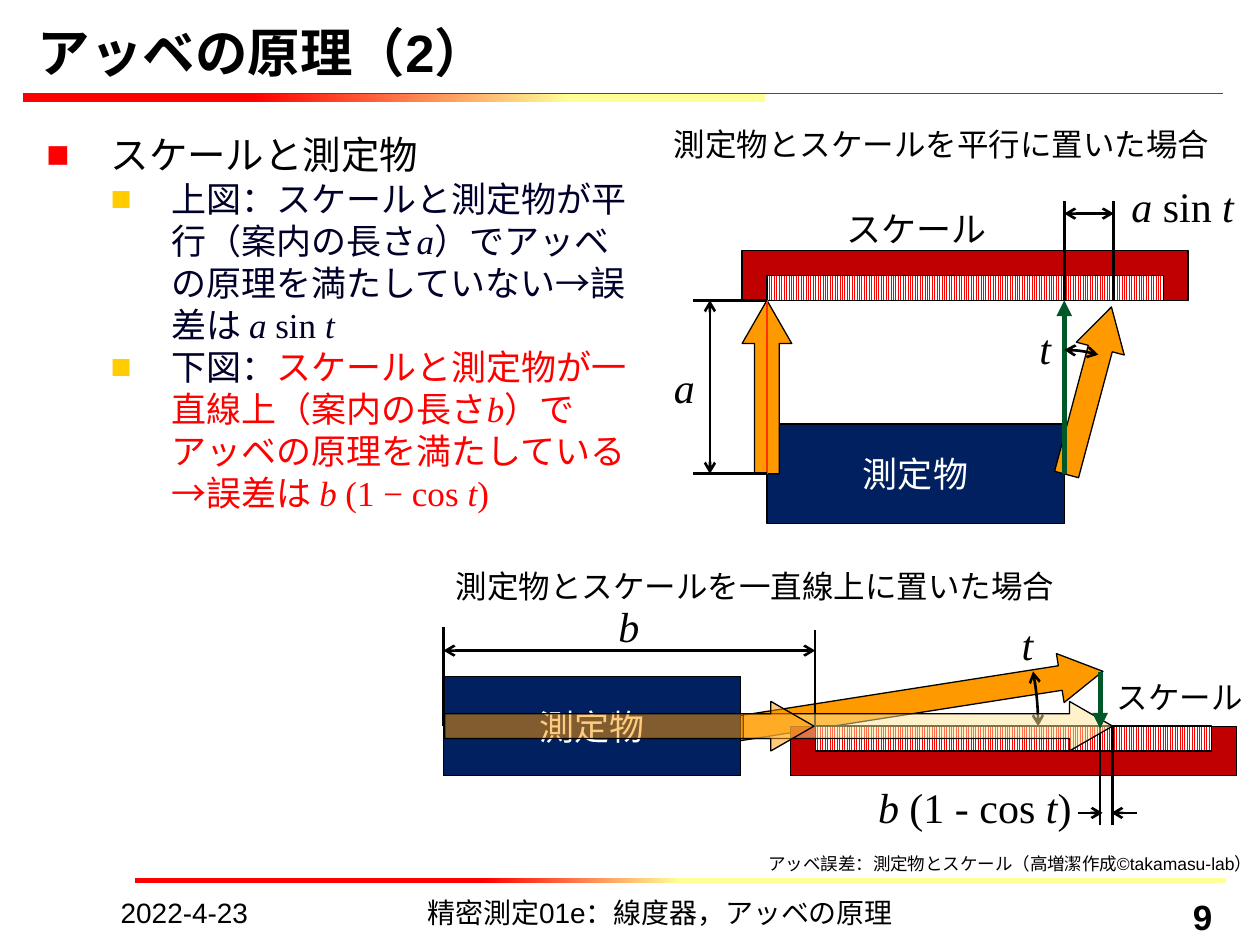
from dataclasses import dataclass
from math import cos, radians, sin

from lxml.etree import SubElement
from pptx import Presentation
from pptx.dml.color import RGBColor
from pptx.enum.dml import MSO_PATTERN
from pptx.enum.shapes import MSO_CONNECTOR, MSO_SHAPE
from pptx.enum.text import MSO_ANCHOR, MSO_AUTO_SIZE, PP_ALIGN
from pptx.oxml.ns import qn
from pptx.util import Inches, Pt

COLORS = {
    "black": "000000", "white": "FFFFFF", "red": "FF0000", "yellow": "FFFF99",
    "gold": "FFCC00", "ink": "00002A", "scale": "C00000", "object": "002060",
    "orange": "FF9900", "axis": "FF3300", "green": "005828", "pale": "FFE699",
}
SERIF = "Times New Roman"


@dataclass(frozen=True)
class Grid:
    """Square cells of `cell` inches counted from an origin in inches."""
    left: float
    top: float
    cell: float

    def point(self, col: float, row: float) -> tuple[int, int]:
        return Inches(self.left + col * self.cell), Inches(self.top + row * self.cell)

    def box(self, col: float, row: float, cols: float, rows: float) -> tuple[int, ...]:
        return *self.point(col, row), Inches(cols * self.cell), Inches(rows * self.cell)


@dataclass(frozen=True)
class Label:
    text: str
    box: tuple[float, float, float, float]
    size: float = 18
    font: str = "Arial"
    align: PP_ALIGN = PP_ALIGN.LEFT
    bold: bool = False
    wrap: bool = True


@dataclass(frozen=True)
class Line:
    start: tuple[float, float]
    end: tuple[float, float]
    heads: str = ""
    color: str = "black"
    width: float = 1.5


@dataclass(frozen=True)
class Bullet:
    phrases: tuple[tuple[str, str], ...]
    size: float
    font: str
    color: str
    left: float
    hanging: float


PAGE = Grid(0, 0, 1)
CELL = 3.54 / 18  # a scale is 18 cells long
UPPER = Grid(5.89, 1.99, CELL)
LOWER = Grid(3.52, 5.37, CELL)

BULLETS = [
    Bullet((("black", "スケールと測定物"),), 22, "Arial", "red", 0.51, 0.51),
    Bullet((("ink", "上図：スケールと測定物が平行（案内の長さ*a*）でアッベの原理を満たしていない→誤差は "
             "*a* sin *t*"),), 20, SERIF, "gold", 0.99, 0.48),
    Bullet((("ink", "下図："),
            ("red", "スケールと測定物が一直線上（案内の長さ*b*）でアッベの原理を満たしている→誤差は "
             "*b* (1 − cos *t*)")), 20, SERIF, "gold", 0.99, 0.48),
]
LABELS = [
    Label("2022-4-23", (0.86, 7.06, 2.17, 0.29), 16),
    Label("精密測定01e：線度器，アッベの原理", (2.64, 7.06, 5.2, 0.29), 16, align=PP_ALIGN.CENTER),
    Label("9", (8.07, 7.06, 1.65, 0.29), 20, align=PP_ALIGN.RIGHT, bold=True),
    Label("アッベ誤差：測定物とスケール（高増潔作成©takamasu-lab）", (6, 6.72, 4.19, 0.27), 10),
    Label("測定物とスケールを平行に置いた場合", (5.25, 0.94, 4.5, 0.4)),
    Label("測定物とスケールを一直線上に置いた場合", (3.52, 4.45, 5.14, 0.4)),
    Label("スケール", (6.48, 1.6, 1.59, 0.44), 20, align=PP_ALIGN.CENTER),
    Label("スケール", (8.73, 5.33, 1.27, 0.4), align=PP_ALIGN.CENTER),
    Label("*a*", (5.25, 2.82, 0.37, 0.51), 24, SERIF, wrap=False),
    Label("*a *sin* t*", (8.88, 1.38, 1.02, 0.51), 24, SERIF, wrap=False),
    Label("*t*", (8.15, 2.51, 0.3, 0.51), 24, SERIF, wrap=False),
    Label("*b*", (4.81, 4.72, 0.37, 0.51), 24, SERIF, wrap=False),
    Label("*b* (1 - cos* t*)", (6.87, 6.15, 1.75, 0.51), 24, SERIF, wrap=False),
    Label("*t*", (8.01, 4.86, 0.3, 0.51), 24, SERIF, wrap=False),
]
UPPER_LINES = [
    Line((13, 9), (13, 2), ">", "green", 3),
    Line((13, 2), (13, -2)), Line((15, 2), (15, -2)),
    Line((13, -1.5), (15, -1.5), "<>"),
    Line((1, 9), (-2, 9)), Line((1, 2), (-2, 2)),
    Line((-1.3, 2), (-1.3, 9), "<>"),
]
LOWER_LINES = [
    Line((27, 6), (27, 2)), Line((26.5, 6), (26.5, 2)),
    Line((26.95, 5.5), (28, 5.5), "<"), Line((25.6, 5.5), (26.6, 5.5), ">"),
    Line((15, -1.05), (0, -1.05), "<>"),
    Line((0, 2), (0, -2)), Line((15, 2), (15, -1.9)),
]


def rgb(name: str) -> RGBColor:
    return RGBColor.from_string(COLORS[name])


def add_runs(p, text: str, font: str, size: float, color: str, bold: bool = False) -> None:
    """Add text in which asterisks switch italics on and off."""
    for i, piece in enumerate(text.split("*")):
        if piece:
            r = p.add_run()
            r.text = piece
            f = r.font
            f.name, f.size, f.bold, f.italic = font, Pt(size), bold, i % 2 == 1
            f.color.rgb = rgb(color)


def add_label(slide, label: Label) -> None:
    tf = slide.shapes.add_textbox(*PAGE.box(*label.box)).text_frame
    tf.word_wrap = label.wrap
    p = tf.paragraphs[0]
    p.alignment = label.align
    add_runs(p, label.text, label.font, label.size, "black", label.bold)


def add_bullets(slide) -> None:
    tf = slide.shapes.add_textbox(*PAGE.box(0.27, 0.99, 4.94, 5.91)).text_frame
    tf.word_wrap = True
    for i, b in enumerate(BULLETS):
        p = tf.paragraphs[0] if i == 0 else tf.add_paragraph()
        p.level = min(i, 1)
        pPr = p._p.get_or_add_pPr()
        pPr.set("marL", str(Inches(b.left)))
        pPr.set("indent", str(-Inches(b.hanging)))
        SubElement(SubElement(pPr, qn("a:buClr")), qn("a:srgbClr"), val=COLORS[b.color])
        SubElement(pPr, qn("a:buFont"), typeface="Arial")
        SubElement(pPr, qn("a:buChar"), char="■")
        for color, text in b.phrases:
            add_runs(p, text, b.font, b.size, color)


def add_block(slide, grid: Grid, box, color: str, kind=MSO_SHAPE.RECTANGLE):
    sp = slide.shapes.add_shape(kind, *grid.box(*box))
    sp.shadow.inherit = False
    sp.fill.solid()
    sp.fill.fore_color.rgb = rgb(color)
    sp.line.color.rgb = rgb("black")
    sp.line.width = Pt(0.75)
    return sp


def add_arrow(slide, grid: Grid, box, kind, turn: float = 0, color: str = "orange",
              alpha: int = 100) -> None:
    sp = add_block(slide, grid, box, color, kind)
    sp.adjustments[0], sp.adjustments[1] = 0.5, 0.87
    sp.rotation = turn
    if alpha < 100:
        clr = sp._element.spPr.find(qn("a:solidFill"))[0]
        SubElement(clr, qn("a:alpha"), val=str(alpha * 1000))


def add_scale(slide, grid: Grid, col: float, row: float, tick_row: float) -> None:
    add_block(slide, grid, (col, row, 18, 2), "scale")
    fill = add_block(slide, grid, (col + 1, tick_row, 16, 1), "white").fill
    fill.patterned()
    fill.pattern = MSO_PATTERN.LIGHT_VERTICAL
    fill.fore_color.rgb, fill.back_color.rgb = rgb("red"), rgb("white")


def add_object(slide, grid: Grid, col: float, row: float) -> None:
    tf = add_block(slide, grid, (col, row, 12, 4), "object").text_frame
    tf.word_wrap = False
    tf.vertical_anchor = MSO_ANCHOR.MIDDLE
    tf.paragraphs[0].alignment = PP_ALIGN.CENTER
    add_runs(tf.paragraphs[0], "測定物", "Arial", 20, "white")


def add_heads(line, heads: str, kind: str) -> None:
    ln = line._get_or_add_ln()
    for mark, tag in (("<", "a:headEnd"), (">", "a:tailEnd")):
        if mark in heads:
            SubElement(ln, qn(tag), type=kind)


def add_line(slide, grid: Grid, line: Line) -> None:
    c = slide.shapes.add_connector(
        MSO_CONNECTOR.STRAIGHT, *grid.point(*line.start), *grid.point(*line.end))
    c.line.color.rgb = rgb(line.color)
    c.line.width = Pt(line.width)
    add_heads(c.line, line.heads, "triangle" if line.color == "green" else "arrow")
    SubElement(c._element.spPr, qn("a:effectLst"))


def add_angle(slide, grid: Grid, center, radius: float, first: float, last: float) -> None:
    """Draw a two-headed arc between two angles in degrees, clockwise from the right."""
    steps = 16
    angles = [radians(first + (last - first) * i / steps) for i in range(steps + 1)]
    points = [grid.point(center[0] + radius * cos(a), center[1] + radius * sin(a)) for a in angles]
    builder = slide.shapes.build_freeform(*points[0])
    builder.add_line_segments(points[1:], close=False)
    sp = builder.convert_to_shape()
    sp.shadow.inherit = False
    sp.fill.background()
    sp.line.color.rgb = rgb("black")
    sp.line.width = Pt(1.5)
    add_heads(sp.line, "<>", "arrow")


def add_rule(slide, box, red_end: float, yellow_start: float) -> None:
    sp = add_block(slide, PAGE, box, "red")
    sp.line.fill.background()
    sp.fill.gradient()
    sp.fill.gradient_angle = 0
    stops = zip(sp.fill.gradient_stops, (red_end, yellow_start), ("red", "yellow"))
    for stop, position, color in stops:
        stop.position, stop.color.rgb = position, rgb(color)


def add_title(slide) -> None:
    sp = slide.shapes.title
    sp.left, sp.top, sp.width, sp.height = PAGE.box(0.2, 0.21, 9.53, 0.5)
    tf = sp.text_frame
    tf.auto_size = MSO_AUTO_SIZE.NONE
    tf.vertical_anchor = MSO_ANCHOR.BOTTOM
    tf.paragraphs[0].alignment = PP_ALIGN.LEFT
    add_runs(tf.paragraphs[0], "アッベの原理（2）", "Arial", 30, "black", True)


def add_parallel_case(slide) -> None:
    add_scale(slide, UPPER, 0, 0, 1)
    add_object(slide, UPPER, 1, 7)
    add_arrow(slide, UPPER, (0, 2, 2, 7), MSO_SHAPE.UP_ARROW)
    add_line(slide, UPPER, Line((1, 2), (1, 9), color="axis", width=1))
    add_arrow(slide, UPPER, (13, 2.15, 2, 7), MSO_SHAPE.UP_ARROW, 15)
    for line in UPPER_LINES:
        add_line(slide, UPPER, line)
    add_angle(slide, UPPER, (13, 9), 5, -90, -74)


def add_inline_case(slide) -> None:
    right = MSO_SHAPE.RIGHT_ARROW
    add_arrow(slide, LOWER, (11.8, -0.06, 14.9, 2), right, -8.9)
    add_scale(slide, LOWER, 14, 2, 2)
    add_object(slide, LOWER, 0, 0)
    for line in LOWER_LINES:
        add_line(slide, LOWER, line)
    add_angle(slide, LOWER, (12, 2), 12, -10.6, 0)
    add_arrow(slide, LOWER, (12.1, 1, 14.9, 2), right, color="pale", alpha=50)
    add_arrow(slide, LOWER, (0.05, 1, 14.9, 2), right, alpha=50)
    add_line(slide, LOWER, Line((26.5, -0.2), (26.5, 2.1), ">", "green", 3))


def main() -> None:
    prs = Presentation()
    prs.slide_width, prs.slide_height = Inches(10), Inches(7.5)
    slide = prs.slides.add_slide(prs.slide_layouts[5])
    add_rule(slide, (1.07, 6.97, 8.66, 0.04), 0.32, 0.5)
    add_rule(slide, (0.18, 0.74, 5.89, 0.07), 0.31, 0.74)
    add_line(slide, PAGE, Line((0.18, 0.74), (9.71, 0.74), color="red", width=0.75))
    add_title(slide)
    add_bullets(slide)
    add_parallel_case(slide)
    add_inline_case(slide)
    for label in LABELS:
        add_label(slide, label)
    prs.save("out.pptx")


if __name__ == "__main__":
    main()
